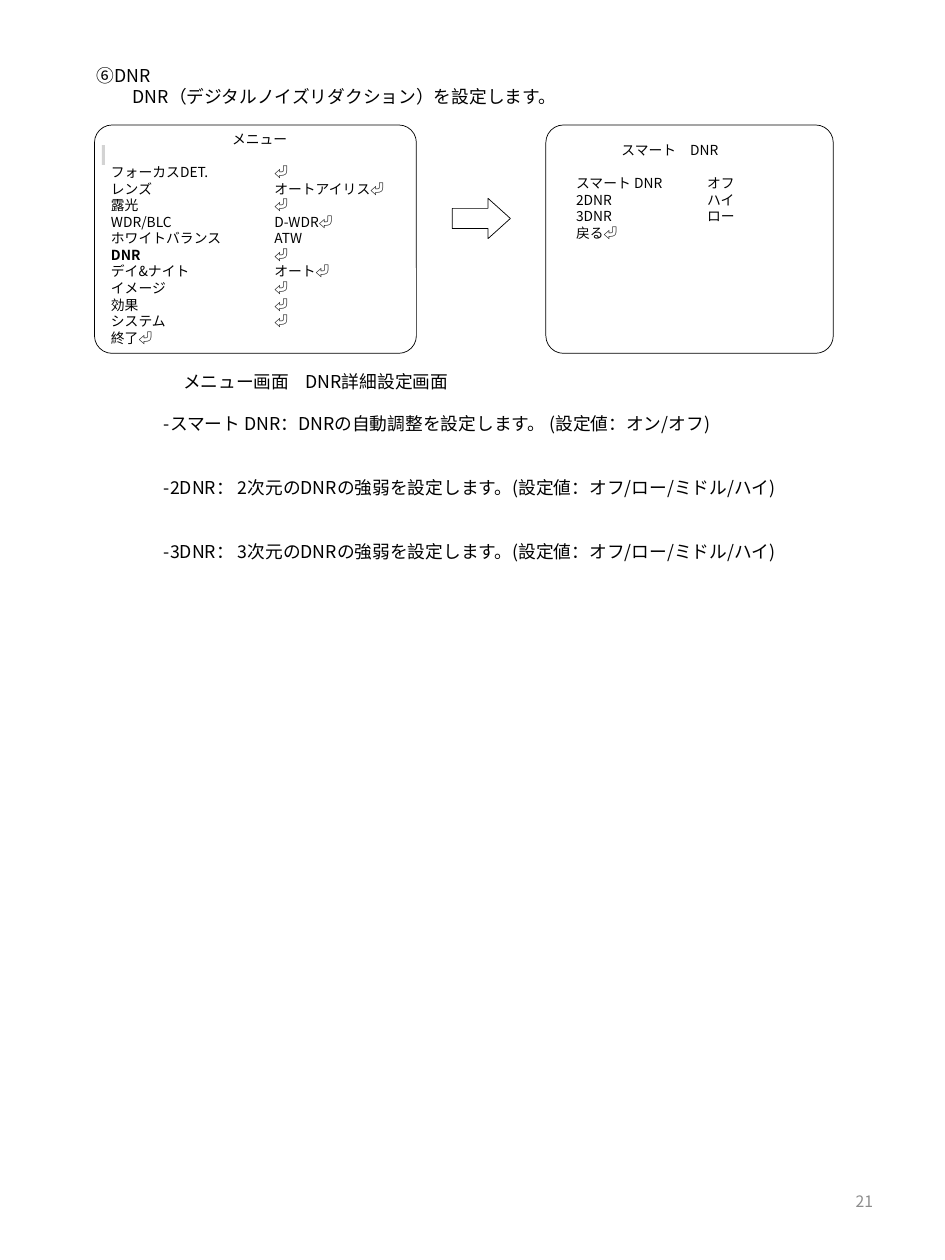
"""Build the DNR settings page of a camera menu manual."""
from pptx import Presentation
from pptx.dml.color import RGBColor
from pptx.enum.shapes import MSO_SHAPE
from pptx.enum.text import MSO_ANCHOR, PP_ALIGN
from pptx.oxml.ns import qn
from pptx.util import Pt
from lxml.etree import SubElement

FONT = "Noto Sans CJK JP"


def color(value):
    return RGBColor.from_string(value)


def write(frame, lines, size, insets, ink="000000"):
    """Fill a frame with (text, tab stop) lines and set its margins."""
    frame.word_wrap = True
    frame.vertical_anchor = MSO_ANCHOR.TOP
    frame.margin_left, frame.margin_top, frame.margin_right, frame.margin_bottom = map(Pt, insets)
    frame.text = "\n".join(text for text, tab in lines)
    for para, (text, tab) in zip(frame.paragraphs, lines):
        para.alignment = PP_ALIGN.LEFT
        para.line_spacing = Pt(size * 1.2)
        if tab:
            stops = SubElement(para._p.get_or_add_pPr(), qn("a:tabLst"))
            SubElement(stops, qn("a:tab"), pos=str(Pt(tab)), algn="l")
        for span in para.runs:
            span.font.size = Pt(size)
            span.font.name = FONT
            span.font.color.rgb = color(ink)
            SubElement(span._r.get_or_add_rPr(), qn("a:ea"), typeface=FONT)
    return frame.paragraphs


deck = Presentation()
deck.slide_width, deck.slide_height = Pt(960), Pt(1280)
page = deck.slides.add_slide(deck.slide_layouts[6])

number_box = page.shapes.add_textbox(Pt(678), Pt(1186.5), Pt(216), Pt(68.5))
number = write(number_box.text_frame, [("21", 0)], 16, (7.2, 3.6, 7.2, 3.6), "8C8C8C")
number[0].alignment = PP_ALIGN.RIGHT
number_box.text_frame.vertical_anchor = MSO_ANCHOR.MIDDLE

heading_box = page.shapes.add_textbox(Pt(62), Pt(62.5), Pt(546.5), Pt(51))
heading_lines = [("⑥DNR", 0), ("DNR（デジタルノイズリダクション）を設定します。", 0)]
heading = write(heading_box.text_frame, heading_lines, 18, (36.5, 3.6, 7.2, 3.6))
heading[1].alignment = PP_ALIGN.CENTER

menu_rows = [
    "メニュー", "フォーカスDET.\t⏎", "レンズ\tオートアイリス⏎", "露光\t⏎",
    "WDR/BLC\tD-WDR⏎", "ホワイトバランス\tATW", "DNR\t⏎", "デイ&ナイト\tオート⏎",
    "イメージ\t⏎", "効果\t⏎", "システム\t⏎", "終了⏎",
]
dnr_rows = ["スマート　DNR", "スマート DNR\tオフ", "2DNR\tハイ", "3DNR\tロー", "戻る⏎"]
panels = [
    (96, 327, menu_rows, 166, (11.5, 0.7, 2.9, 0.7)),
    (554.5, 292, dnr_rows, 133, (25.5, 11.7, 2.9, 0.7)),
]
shapes = []
titles = []
for left, width, rows, tab, insets in panels:
    panel = page.shapes.add_shape(MSO_SHAPE.ROUNDED_RECTANGLE, Pt(left), Pt(127), Pt(width), Pt(232))
    panel.adjustments[0] = 0.077
    shapes.append(panel)
    lines = [(row, tab if "\t" in row else 0) for row in rows]
    paras = write(panel.text_frame, lines, 14, insets)
    paras[0].space_after = Pt(16.8)
    titles.append(paras[0])
    for row, para in zip(rows, paras):
        if row.startswith("DNR"):
            para.runs[0].font.bold = True
titles[0].alignment = PP_ALIGN.CENTER
titles[1]._p.get_or_add_pPr().set("indent", str(Pt(46)))

arrow = page.shapes.add_shape(MSO_SHAPE.RIGHT_ARROW, Pt(459.5), Pt(201.5), Pt(59), Pt(41))
arrow.adjustments[1] = 0.554
for shape in shapes + [arrow]:
    shape.shadow.inherit = False
    shape.fill.solid()
    shape.fill.fore_color.rgb = color("FFFFFF")
    shape.line.color.rgb = color("000000")
    shape.line.width = Pt(0.75)

cursor = page.shapes.add_shape(MSO_SHAPE.RECTANGLE, Pt(103.5), Pt(147.5), Pt(3), Pt(20))
cursor.shadow.inherit = False
cursor.fill.solid()
cursor.fill.fore_color.rgb = color("D3D3D3")
cursor.line.fill.background()

notes_box = page.shapes.add_textbox(Pt(118), Pt(373), Pt(766), Pt(198.5))
note_lines = [
    ("メニュー画面\tDNR詳細設定画面", 458),
    ("-スマート DNR：DNRの自動調整を設定します。 (設定値：オン/オフ)", 0),
    ("-2DNR： 2次元のDNRの強弱を設定します。(設定値：オフ/ロー/ミドル/ハイ)", 0),
    ("-3DNR： 3次元のDNRの強弱を設定します。(設定値：オフ/ロー/ミドル/ハイ)", 0),
]
notes = write(notes_box.text_frame, note_lines, 18, (48.5, 3.6, 7.2, 3.6))
notes[0]._p.get_or_add_pPr().set("indent", str(Pt(19.5)))
for para, gap in zip(notes[1:], (21.6, 43, 43)):
    para.space_before = Pt(gap)

deck.save("out.pptx")
